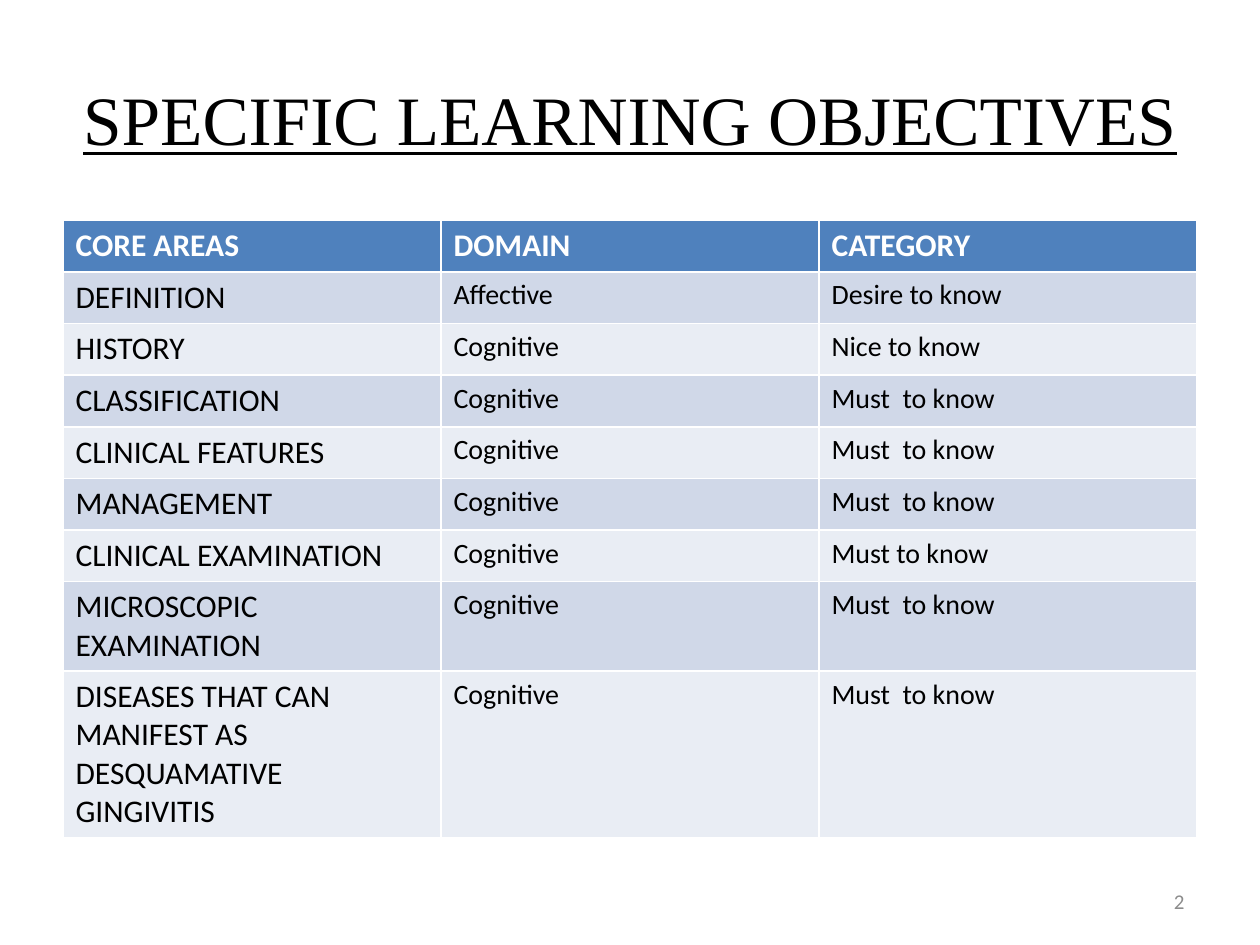
from typing import NamedTuple

from pptx import Presentation
from pptx.dml.color import RGBColor
from pptx.enum.text import MSO_ANCHOR, PP_ALIGN
from pptx.util import Inches, Pt

WIDE, HIGH = Inches(10), Inches(7.5)
INKS = {"black": "000000", "white": "FFFFFF", "grey": "8C8C8C",
        "head": "4F81BD", "odd": "D0D8E8", "even": "E9EDF4"}


class Box(NamedTuple):
    """Left, top, width and height as shares of the slide."""
    left: float
    top: float
    width: float
    height: float

    def place(self) -> tuple[int, int, int, int]:
        return (round(self.left * WIDE), round(self.top * HIGH),
                round(self.width * WIDE), round(self.height * HIGH))


class Goal(NamedTuple):
    area: str
    domain: str
    rank: str


HEAD = Goal("CORE AREAS", "DOMAIN", "CATEGORY")
GOALS = [
    Goal("DEFINITION", "Affective", "Desire to know"),
    Goal("HISTORY", "Cognitive", "Nice to know"),
    Goal("CLASSIFICATION", "Cognitive", "Must  to know"),
    Goal("CLINICAL FEATURES", "Cognitive", "Must  to know"),
    Goal("MANAGEMENT", "Cognitive", "Must  to know"),
    Goal("CLINICAL EXAMINATION", "Cognitive", "Must to know"),
    Goal("MICROSCOPIC EXAMINATION", "Cognitive", "Must  to know"),
    Goal("DISEASES THAT CAN MANIFEST AS\nDESQUAMATIVE GINGIVITIS",
         "Cognitive", "Must  to know"),
]


def ink(name: str) -> RGBColor:
    return RGBColor.from_string(INKS[name])


def write(frame, text: str, size: float, color: str = "black",
          face: str = "Calibri", bold: bool = False, under: bool = False,
          align=PP_ALIGN.LEFT, anchor=None) -> None:
    frame.word_wrap = True
    if anchor is not None:
        frame.vertical_anchor = anchor
    para = frame.paragraphs[0]
    para.text = text
    para.alignment = align
    for run in para.runs:
        font = run.font
        font.size, font.name = Pt(size), face
        font.bold, font.underline = bold, under
        font.color.rgb = ink(color)


def draw_row(table, row: int, goal: Goal) -> None:
    table.rows[row].height = Inches(0.41)
    top = row == 0
    fill = "head" if top else "odd" if row % 2 else "even"
    for col, text in enumerate(goal):
        cell = table.cell(row, col)
        cell.fill.solid()
        cell.fill.fore_color.rgb = ink(fill)
        write(cell.text_frame, text, size=18 if top or col == 0 else 16,
              color="white" if top else "black", bold=top)


def main() -> None:
    deck = Presentation()
    deck.slide_width, deck.slide_height = WIDE, HIGH
    slide = deck.slides.add_slide(deck.slide_layouts[5])

    title = slide.shapes.title
    title.left, title.top, title.width, title.height = Box(
        0.05, 0.04, 0.9, 0.17).place()
    write(title.text_frame, "SPECIFIC LEARNING OBJECTIVES", size=39.6,
          face="Times New Roman", under=True, align=PP_ALIGN.CENTER,
          anchor=MSO_ANCHOR.MIDDLE)

    rows = [HEAD, *GOALS]
    area = Box(0.05, 0.233, 0.9, 0.49).place()
    table = slide.shapes.add_table(len(rows), len(HEAD), *area).table
    for row, goal in enumerate(rows):
        draw_row(table, row, goal)

    number = slide.shapes.add_textbox(*Box(0.717, 0.927, 0.233, 0.053).place())
    write(number.text_frame, "2", size=12, color="grey",
          align=PP_ALIGN.RIGHT, anchor=MSO_ANCHOR.MIDDLE)
    deck.save("out.pptx")


if __name__ == "__main__":
    main()
